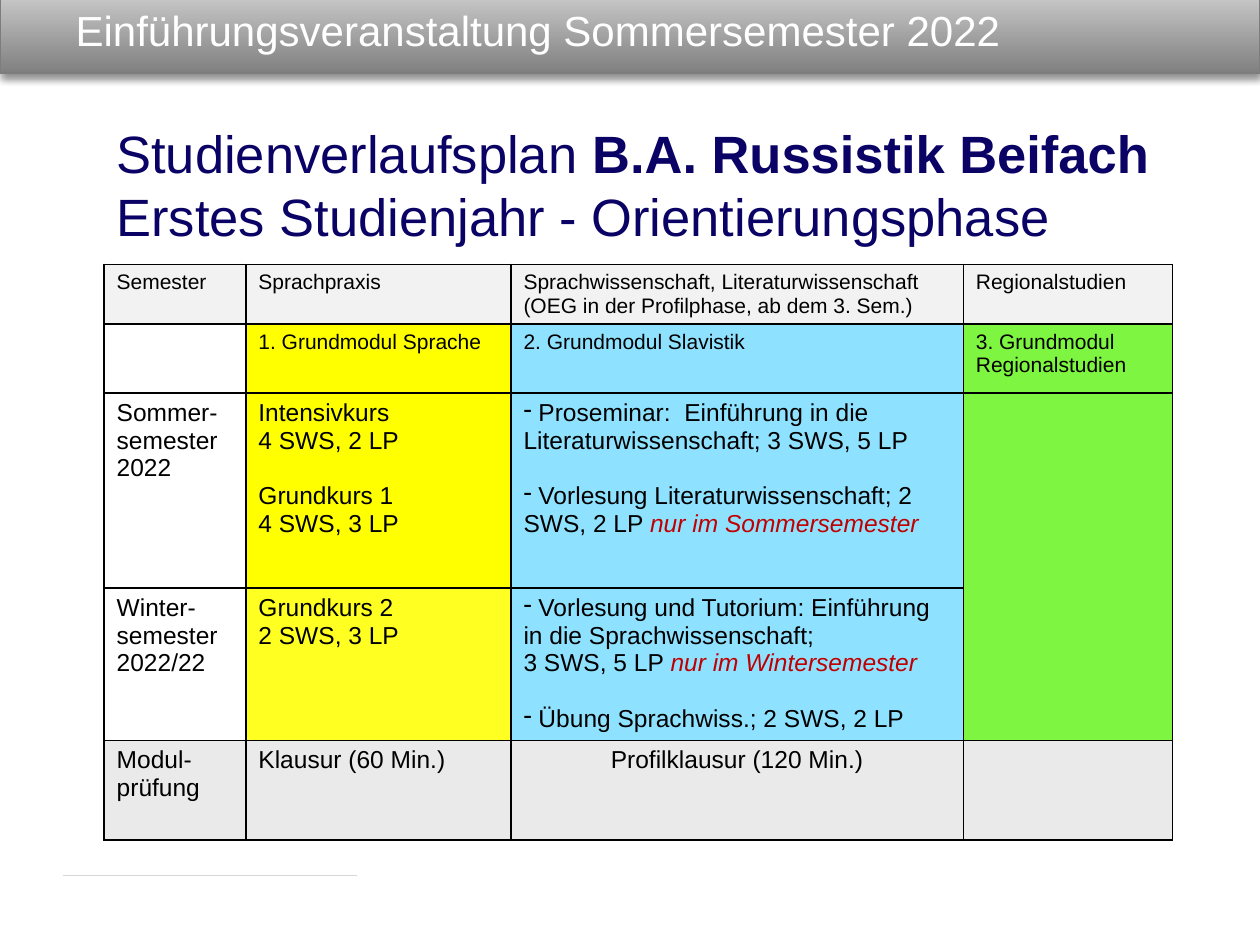
from lxml import etree
from pptx import Presentation
from pptx.dml.color import RGBColor
from pptx.enum.shapes import MSO_CONNECTOR, MSO_SHAPE
from pptx.enum.text import MSO_ANCHOR, PP_ALIGN
from pptx.oxml import parse_xml
from pptx.oxml.ns import nsdecls, qn
from pptx.util import Pt

RECT, STRAIGHT = MSO_SHAPE.RECTANGLE, MSO_CONNECTOR.STRAIGHT
MIDDLE = MSO_ANCHOR.MIDDLE
LEFT, CENTER = PP_ALIGN.LEFT, PP_ALIGN.CENTER

BLACK = RGBColor(0x00, 0x00, 0x00)
WHITE = RGBColor(0xFF, 0xFF, 0xFF)
NAVY = RGBColor(0x0A, 0x03, 0x65)
RED = RGBColor(0xC0, 0x00, 0x00)
DARK_GRAY = RGBColor(0x80, 0x80, 0x80)
MID_GRAY = RGBColor(0xCD, 0xCD, 0xCD)
EDGE_GRAY = RGBColor(0x7D, 0x7D, 0x7D)
RULE_GRAY = RGBColor(0xD8, 0xD8, 0xD8)
HEAD_GRAY = RGBColor(0xF2, 0xF2, 0xF2)
EXAM_GRAY = RGBColor(0xEA, 0xEA, 0xEA)
YELLOW = RGBColor(0xFF, 0xFF, 0x00)
SOFT_YELLOW = RGBColor(0xFF, 0xFF, 0x21)
BLUE = RGBColor(0x8F, 0xE2, 0xFF)
GREEN = RGBColor(0x7D, 0xF5, 0x41)


def add_run(p, text, size, color, **formats):
    r = p.add_run()
    r.text = text
    r.font.color.rgb = color
    for name, value in {"name": "Arial", "size": Pt(size), **formats}.items():
        setattr(r.font, name, value)


def add_borders(cell):
    tc_pr = cell._tc.get_or_add_tcPr()
    for side in ("lnL", "lnR", "lnT", "lnB"):
        tc_pr.append(parse_xml(
            f'<a:{side} {nsdecls("a")} w="{Pt(1)}"><a:solidFill>'
            f'<a:srgbClr val="{BLACK}"/></a:solidFill></a:{side}>'))


prs = Presentation()
prs.slide_width, prs.slide_height = Pt(720), Pt(540)
s = prs.slides.add_slide(prs.slide_layouts[5])

# Header band, behind the title
band = s.shapes.add_shape(RECT, Pt(0), Pt(-5.76), Pt(720), Pt(47.5))
band.fill.gradient()
band.fill.gradient_angle = 90
for stop, color in zip(band.fill.gradient_stops, (DARK_GRAY, MID_GRAY)):
    stop.color.rgb = color
band.fill.gradient_stops[0].position = 0
band.fill.gradient_stops[1].position = 1
band.line.color.rgb = EDGE_GRAY
band.line.width = Pt(0.75)
band._element.spPr.append(parse_xml(
    f'<a:effectLst {nsdecls("a")}><a:outerShdw blurRad="{Pt(4)}" dist="{Pt(3)}" '
    'dir="5400000" rotWithShape="0"><a:srgbClr val="000000">'
    '<a:alpha val="43000"/></a:srgbClr></a:outerShdw></a:effectLst>'))
s.shapes._spTree.insert(2, band._element)

rule = s.shapes.add_connector(STRAIGHT, Pt(36), Pt(500.4), Pt(204), Pt(500.4))
rule.line.color.rgb = RULE_GRAY
rule.line.width = Pt(0.75)
etree.SubElement(rule._element.spPr, qn("a:effectLst"))

title = s.shapes.title
title.left, title.top, title.width, title.height = Pt(36), Pt(0), Pt(667.5), Pt(34)
title.text_frame.vertical_anchor = MIDDLE
p = title.text_frame.paragraphs[0]
p.alignment = LEFT
add_run(p, "Einführungsveranstaltung Sommersemester 2022", 24, WHITE)

# Study plan: (font size, row height, cells); each cell is (fill, lines).
# "- " starts a bullet, "" asks for a gap, "|" starts a red note.
PLAN = [
    (12, 32, [
        (HEAD_GRAY, ["Semester"]),
        (HEAD_GRAY, ["Sprachpraxis"]),
        (HEAD_GRAY, ["Sprachwissenschaft, Literaturwissenschaft",
                     "(OEG in der Profilphase, ab dem 3. Sem.)"]),
        (HEAD_GRAY, ["Regionalstudien"])]),
    (12, 39.5, [
        (None, []),
        (YELLOW, ["1. Grundmodul Sprache"]),
        (BLUE, ["2. Grundmodul Slavistik"]),
        (GREEN, ["3. Grundmodul Regionalstudien"])]),
    (14, 111.5, [
        (None, ["Sommer-semester 2022"]),
        (YELLOW, ["Intensivkurs", "4 SWS, 2 LP", "",
                  "Grundkurs 1", "4 SWS, 3 LP"]),
        (BLUE, ["- Proseminar:  Einführung in die Literaturwissenschaft; 3 SWS, 5 LP", "",
                "- Vorlesung Literaturwissenschaft; 2 SWS, 2 LP |nur im Sommersemester"]),
        (GREEN, [])]),
    (14, 87, [
        (None, ["Winter-semester 2022/22"]),
        (SOFT_YELLOW, ["Grundkurs 2", "2 SWS, 3 LP"]),
        (BLUE, ["- Vorlesung und Tutorium: Einführung in die Sprachwissenschaft;",
                "3 SWS, 5 LP |nur im Wintersemester", "",
                "- Übung Sprachwiss.; 2 SWS, 2 LP"]),
        (GREEN, [])]),
    (14, 57, [
        (EXAM_GRAY, ["Modul-prüfung"]),
        (EXAM_GRAY, ["Klausur (60 Min.)"]),
        (EXAM_GRAY, ["Profilklausur (120 Min.)"]),
        (EXAM_GRAY, [])]),
]
COLUMN_WIDTHS = [81, 151.5, 258.5, 119.5]

table = s.shapes.add_table(len(PLAN), len(COLUMN_WIDTHS), Pt(59.5), Pt(151),
                           Pt(sum(COLUMN_WIDTHS)), Pt(sum(row[1] for row in PLAN))).table
table.first_row = table.horz_banding = False
for column, width in zip(table.columns, COLUMN_WIDTHS):
    column.width = Pt(width)

for i, (size, height, cells) in enumerate(PLAN):
    table.rows[i].height = Pt(height)
    for j, (color, lines) in enumerate(cells):
        cell = table.cell(i, j)
        add_borders(cell)
        if color is None:
            cell.fill.background()
        else:
            cell.fill.solid()
            cell.fill.fore_color.rgb = color
        p, gap = None, False
        for line in lines:
            if not line:
                gap = True
                continue
            p = cell.text_frame.add_paragraph() if p else cell.text_frame.paragraphs[0]
            if gap:
                p.space_before = Pt(16)
                gap = False
            if line.startswith("- "):
                etree.SubElement(p._p.get_or_add_pPr(), qn("a:buChar"), char="-")
                line = line[1:]
            text, _, note = line.partition("|")
            add_run(p, text, size, BLACK)
            if note:
                add_run(p, note, size, RED, italic=True)

table.cell(2, 3).merge(table.cell(3, 3))
table.cell(4, 2).text_frame.paragraphs[0].alignment = CENTER

heading = s.shapes.add_textbox(Pt(59.5), Pt(65.5), Pt(607), Pt(79))
tf = heading.text_frame
tf.word_wrap = True
p = tf.paragraphs[0]
add_run(p, "Studienverlaufsplan ", 30, NAVY)
add_run(p, "B.A. Russistik Beifach", 30, NAVY, bold=True)
add_run(tf.add_paragraph(), "Erstes Studienjahr - Orientierungsphase", 30, NAVY)

prs.save("out.pptx")
